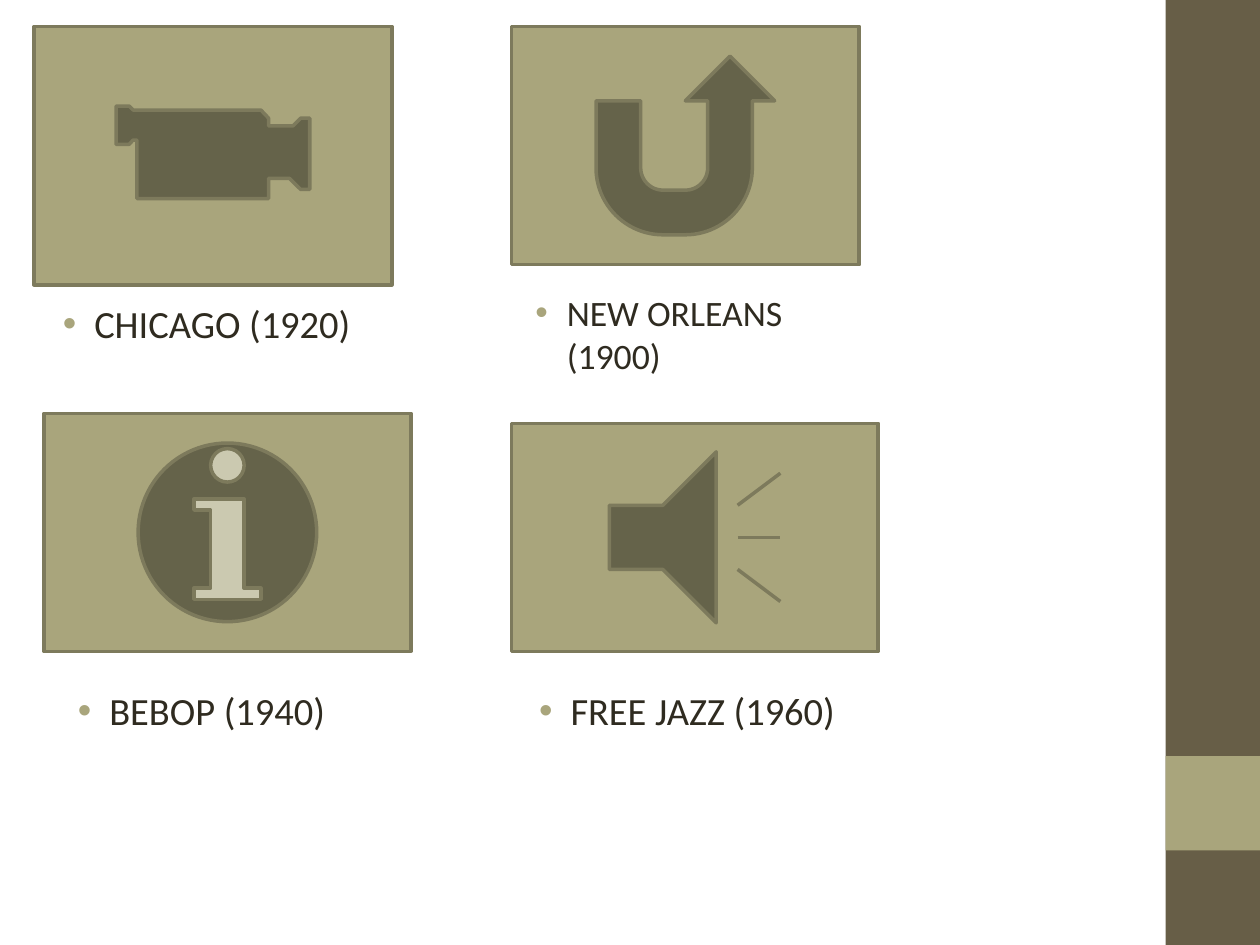
from lxml import etree
from pptx import Presentation
from pptx import util as u
from pptx.dml.color import RGBColor
from pptx.enum import shapes, text
from pptx.oxml.ns import qn

COLOURS = {"brown": "675E47", "olive": "A9A57C", "outline": "7D7A5C", "ink": "2F2B20"}
BUTTON = shapes.MSO_SHAPE


def assign(target, values):
    """Set each named value as an attribute of the target."""
    for name, value in values.items():
        setattr(target, name, value)


class JazzPage:
    """Hold the style and the slide, and draw each kind of element."""

    font = {"name": "Calibri"}
    frame = {"word_wrap": True, "vertical_anchor": text.MSO_ANCHOR.TOP,
             "auto_size": text.MSO_AUTO_SIZE.NONE}
    indent = {"marL": u.Inches(0.38), "indent": u.Inches(-0.25)}

    def __init__(self, page):
        self.page = page

    def colour(self, name):
        """Look up a named colour."""
        return RGBColor.from_string(COLOURS[name])

    def block(self, kind, place, fill, outline=None):
        """Draw a filled preset shape, with an outline if one is named."""
        shape = self.page.shapes.add_shape(kind, *map(u.Inches, place))
        shape.shadow.inherit = False
        shape.fill.solid()
        shape.fill.fore_color.rgb = self.colour(fill)
        if outline:
            shape.line.color.rgb = self.colour(outline)
            shape.line.width = u.Pt(2)
        else:
            shape.line.fill.background()

    def button(self, kind, place):
        """Draw an action button."""
        self.block(kind, place, "olive", "outline")

    def caption(self, words, left, top, size=22):
        """Write a bulleted caption."""
        box = self.page.shapes.add_textbox(*map(u.Inches, (left, top, 2.84, 0.71)))
        assign(box.text_frame, self.frame)
        para = box.text_frame.paragraphs[0]
        layout = para._p.get_or_add_pPr()
        for name, value in self.indent.items():
            layout.set(name, str(value))
        tint = etree.SubElement(layout, qn("a:buClr"))
        etree.SubElement(tint, qn("a:srgbClr"), val=COLOURS["olive"])
        etree.SubElement(layout, qn("a:buFont"), typeface="Arial")
        etree.SubElement(layout, qn("a:buChar"), char="•")
        span = para.add_run()
        span.text = words
        assign(span.font, {**self.font, "size": u.Pt(size)})
        span.font.color.rgb = self.colour("ink")


def main():
    """Build the slide of jazz styles."""
    deck = Presentation()
    assign(deck, {"slide_width": u.Inches(10), "slide_height": u.Inches(7.5)})
    jazz = JazzPage(deck.slides.add_slide(deck.slide_layouts[6]))

    jazz.block(BUTTON.RECTANGLE, (9.25, 0, 0.75, 7.5), "brown")
    jazz.block(BUTTON.RECTANGLE, (9.25, 6, 0.75, 0.75), "olive")

    styles = [
        (BUTTON.ACTION_BUTTON_MOVIE, (0.27, 0.21, 2.84, 2.05), ("CHICAGO (1920)", 0.27, 2.33)),
        (BUTTON.ACTION_BUTTON_RETURN, (4.06, 0.21, 2.76, 1.89),
         ("NEW ORLEANS (1900)", 4.02, 2.26, 20.4)),
        (BUTTON.ACTION_BUTTON_INFORMATION, (0.35, 3.28, 2.91, 1.89), ("BEBOP (1940)", 0.39, 5.4)),
        (BUTTON.ACTION_BUTTON_SOUND, (4.06, 3.36, 2.91, 1.81), ("FREE JAZZ (1960)", 4.05, 5.4)),
    ]
    for kind, place, caption in styles:
        jazz.button(kind, place)
        jazz.caption(*caption)

    deck.save("out.pptx")


if __name__ == "__main__":
    main()
